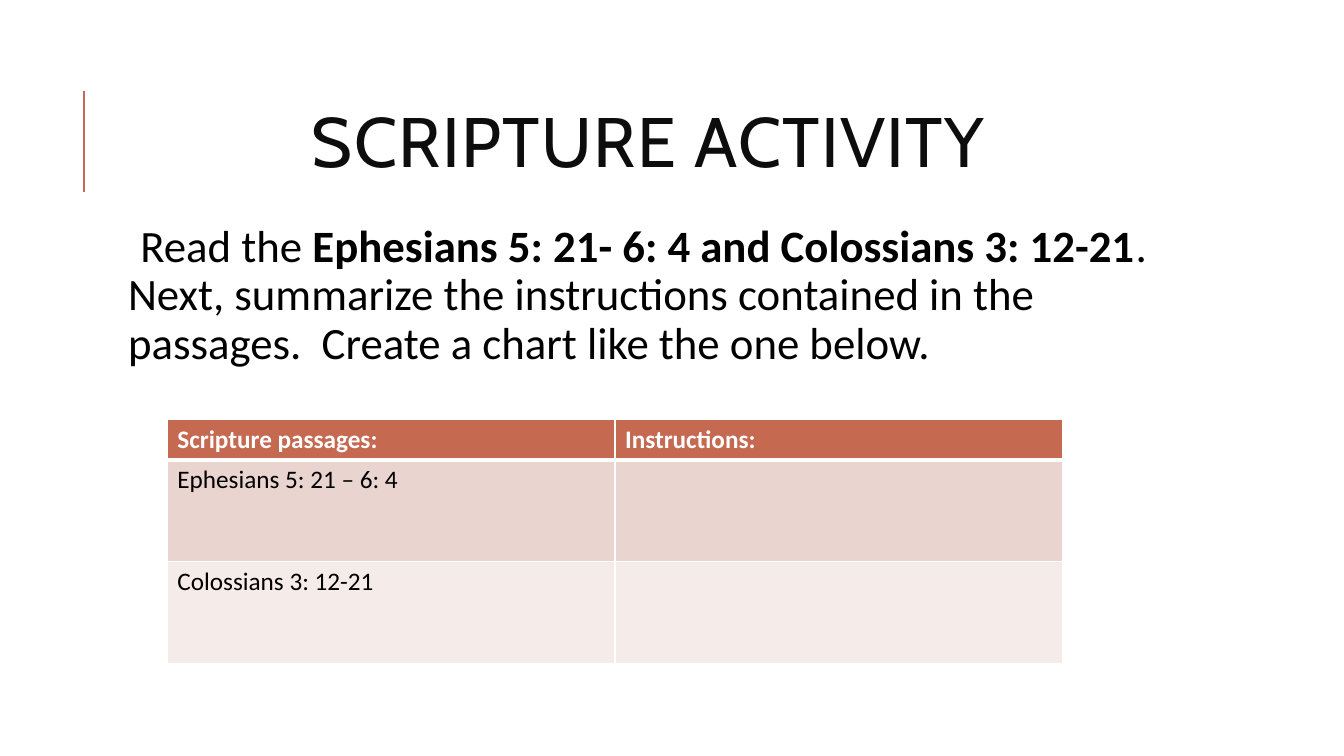
from lxml import etree
from pptx import Presentation
from pptx.dml.color import RGBColor
from pptx.enum.shapes import MSO_CONNECTOR
from pptx.enum.text import MSO_ANCHOR, PP_ALIGN
from pptx.oxml.ns import qn
from pptx.util import Inches, Pt

STRAIGHT = MSO_CONNECTOR.STRAIGHT
MIDDLE = MSO_ANCHOR.MIDDLE
CENTER = PP_ALIGN.CENTER

COLORS = {
    "accent": "C66951",
    "title": "0D0D0D",
    "text": "000000",
    "white": "FFFFFF",
    "band_dark": "EAD4D0",
    "band_light": "F5EBE9",
}


def add_run(p, text, size, color, font="Calibri", bold=False):
    r = p.add_run()
    r.text = text
    r.font.size = Pt(size)
    r.font.name = font
    r.font.bold = bold
    r.font.color.rgb = RGBColor.from_string(COLORS[color])
    return r


def add_border(cell, side, width):
    ln = etree.SubElement(cell._tc.get_or_add_tcPr(), qn("a:" + side), w=str(Pt(width)))
    fill = etree.SubElement(ln, qn("a:solidFill"))
    etree.SubElement(fill, qn("a:srgbClr"), val=COLORS["white"])


prs = Presentation()
prs.slide_width = Inches(13.33)
prs.slide_height = Inches(7.5)
s = prs.slides.add_slide(prs.slide_layouts[6])

rule = s.shapes.add_connector(STRAIGHT, Inches(0.83), Inches(1.9), Inches(0.83), Inches(0.9))
rule.line.color.rgb = RGBColor.from_string(COLORS["accent"])
rule.line.width = Pt(1.5)
etree.SubElement(rule._element.spPr, qn("a:effectLst"))

title = s.shapes.add_textbox(Inches(1.12), Inches(0.64), Inches(10.63), Inches(1.64))
tf = title.text_frame
tf.word_wrap = True
tf.vertical_anchor = MIDDLE
p = tf.paragraphs[0]
p.alignment = CENTER
p.line_spacing = 0.8
r = add_run(p, "SCRIPTURE ACTIVITY", 50, "title", font="Cabin")
r.font._element.set("spc", "100")

body = s.shapes.add_textbox(Inches(1.12), Inches(2.17), Inches(10.63), Inches(1.53))
tf = body.text_frame
tf.word_wrap = True
tf.margin_left = tf.margin_right = tf.margin_top = tf.margin_bottom = Inches(0.05)
p = tf.paragraphs[0]
p.line_spacing = 0.9
p.space_before = Pt(12)
p.space_after = Pt(2)
pPr = p._p.get_or_add_pPr()
pPr.set("marL", str(Inches(0.1)))
pPr.set("indent", str(Inches(-0.1)))
bullet_color = etree.SubElement(pPr, qn("a:buClr"))
etree.SubElement(bullet_color, qn("a:srgbClr"), val=COLORS["accent"])
etree.SubElement(pPr, qn("a:buChar"), char=" ")
add_run(p, "Read the ", 32, "text")
add_run(p, "Ephesians 5: 21- 6: 4 and Colossians 3: 12-21", 32, "text", bold=True)
add_run(
    p,
    ".  Next, summarize the instructions contained in the passages.  "
    "Create a chart like the one below.",
    32,
    "text",
)

rows = [
    (["Scripture passages:", "Instructions:"], 0.4, "accent"),
    (["Ephesians 5: 21 – 6: 4", ""], 1.01, "band_dark"),
    (["Colossians 3: 12-21", ""], 1.01, "band_light"),
]
frame = s.shapes.add_table(len(rows), 2, Inches(1.66), Inches(4.16), Inches(8.88), Inches(2.42))
table = frame.table
for column in table.columns:
    column.width = Inches(4.44)
for i, (texts, height, fill) in enumerate(rows):
    table.rows[i].height = Inches(height)
    header = i == 0
    for j, text in enumerate(texts):
        cell = table.cell(i, j)
        for side in ("lnL", "lnR", "lnT", "lnB"):
            thick = (header and side == "lnB") or (i == 1 and side == "lnT")
            add_border(cell, side, 3 if thick else 1)
        cell.fill.solid()
        cell.fill.fore_color.rgb = RGBColor.from_string(COLORS[fill])
        if text:
            p = cell.text_frame.paragraphs[0]
            add_run(p, text, 18, "white" if header else "text", bold=header)

prs.save("out.pptx")
